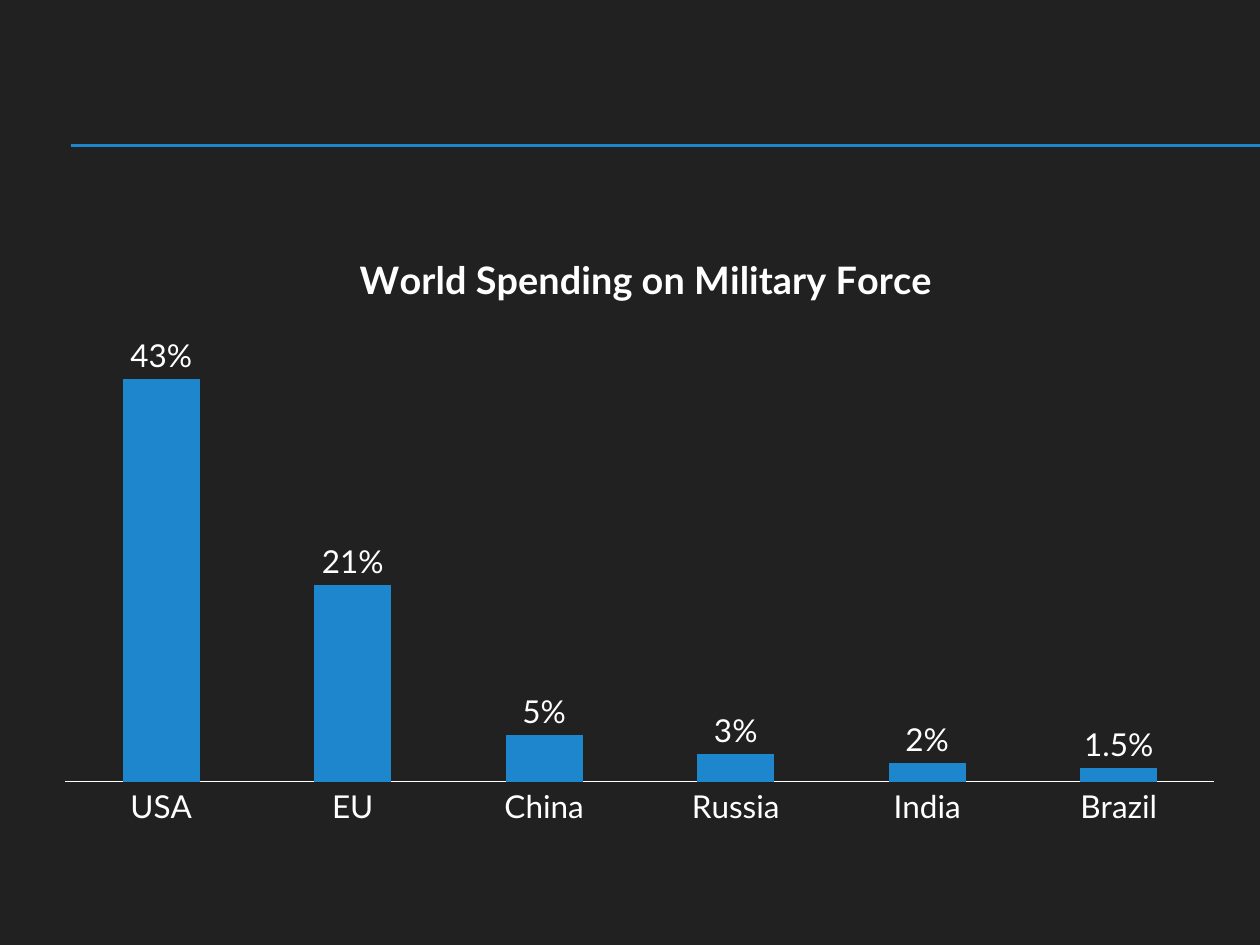
from lxml.etree import SubElement as Sub
from pptx import Presentation
from pptx.chart.data import CategoryChartData as Data
from pptx.dml.color import RGBColor
from pptx.enum.chart import XL_CHART_TYPE as Kind, XL_LABEL_POSITION as Spot
from pptx.enum.chart import XL_TICK_MARK as Tick
from pptx.enum.shapes import MSO_CONNECTOR as Link
from pptx.oxml.ns import qn
from pptx.util import Inches, Pt

DARK = RGBColor(0x21, 0x21, 0x21)
BLUE = RGBColor(0x1D, 0x86, 0xCD)
WHITE = RGBColor(0xFF, 0xFF, 0xFF)
SPEND = {"USA": 43, "EU": 21, "China": 5, "Russia": 3, "India": 2, "Brazil": 1.5}


def place(node, index, **spots):
    """Give a chart part a fixed layout, in fractions of the chart."""
    for old in node.findall(qn("c:layout")):
        node.remove(old)
    layout = node.makeelement(qn("c:layout"))
    node.insert(index, layout)
    manual = Sub(layout, qn("c:manualLayout"))
    if "w" in spots:
        Sub(manual, qn("c:layoutTarget"), val="inner")
    for key in "xy":
        Sub(manual, qn(f"c:{key}Mode"), val="edge")
    for key, val in spots.items():
        Sub(manual, qn(f"c:{key}"), val=str(val))


class Deck:
    font, size, big = "Lato", Pt(18), Pt(21.6)

    def __init__(self, wide, high):
        self.show = Presentation()
        self.show.slide_width, self.show.slide_height = Inches(wide), Inches(high)
        self.slide = self.show.slides.add_slide(self.show.slide_layouts[6])
        fill = self.slide.background.fill
        fill.solid()
        fill.fore_color.rgb = DARK

    def style(self, font, size, bold=False):
        font.name, font.size, font.bold = self.font, size, bold
        font.color.rgb = WHITE

    def rule(self, left, right, top):
        line = self.slide.shapes.add_connector(
            Link.STRAIGHT, Inches(left), Inches(top), Inches(right), Inches(top))
        line.line.color.rgb = BLUE
        line.line.width = Pt(0.75)
        Sub(line._element.spPr, qn("a:effectLst"))

    def title(self, chart, text):
        chart.has_title = True
        head = chart.chart_title
        run = head.text_frame.paragraphs[0].add_run()
        run.text = text
        self.style(run.font, self.big, True)
        place(head._element, 1, x=0.26, y=0.05)

    def bars(self, box, text, table):
        data = Data()
        data.categories = list(table)
        data.add_series("Series 1", list(table.values()))
        chart = self.slide.shapes.add_chart(
            Kind.COLUMN_CLUSTERED, *map(Inches, box), data).chart
        self.style(chart.font, self.size)
        chart.has_legend = False
        self.title(chart, text)

        plot = chart.plots[0]
        plot.vary_by_categories = False
        plot.gap_width, plot.overlap = 150, -25
        fill = plot.series[0].format.fill
        fill.solid()
        fill.fore_color.rgb = BLUE

        plot.has_data_labels = True
        tags = plot.data_labels
        tags.show_value = True
        tags.number_format, tags.number_format_is_linked = 'General"%"', False
        tags.position = Spot.OUTSIDE_END
        self.style(tags.font, self.size)

        cats, vals = chart.category_axis, chart.value_axis
        cats.major_tick_mark = cats.minor_tick_mark = Tick.NONE
        cats.format.line.color.rgb = WHITE
        cats.format.line.width = Pt(0.75)
        vals.minimum_scale, vals.maximum_scale = 0, 50
        vals.has_major_gridlines = False
        vals.visible = False
        area = chart._chartSpace.chart.plotArea
        place(area, 0, x=0.02, y=0.16, w=0.96, h=0.75)


def main():
    deck = Deck(10, 7.5)
    for top in (1.15, 1.16):
        deck.rule(0.56, 10, top)
    deck.bars((0.33, 1.7, 9.5, 4.95), "World Spending on Military Force", SPEND)
    deck.show.save("out.pptx")


if __name__ == "__main__":
    main()
